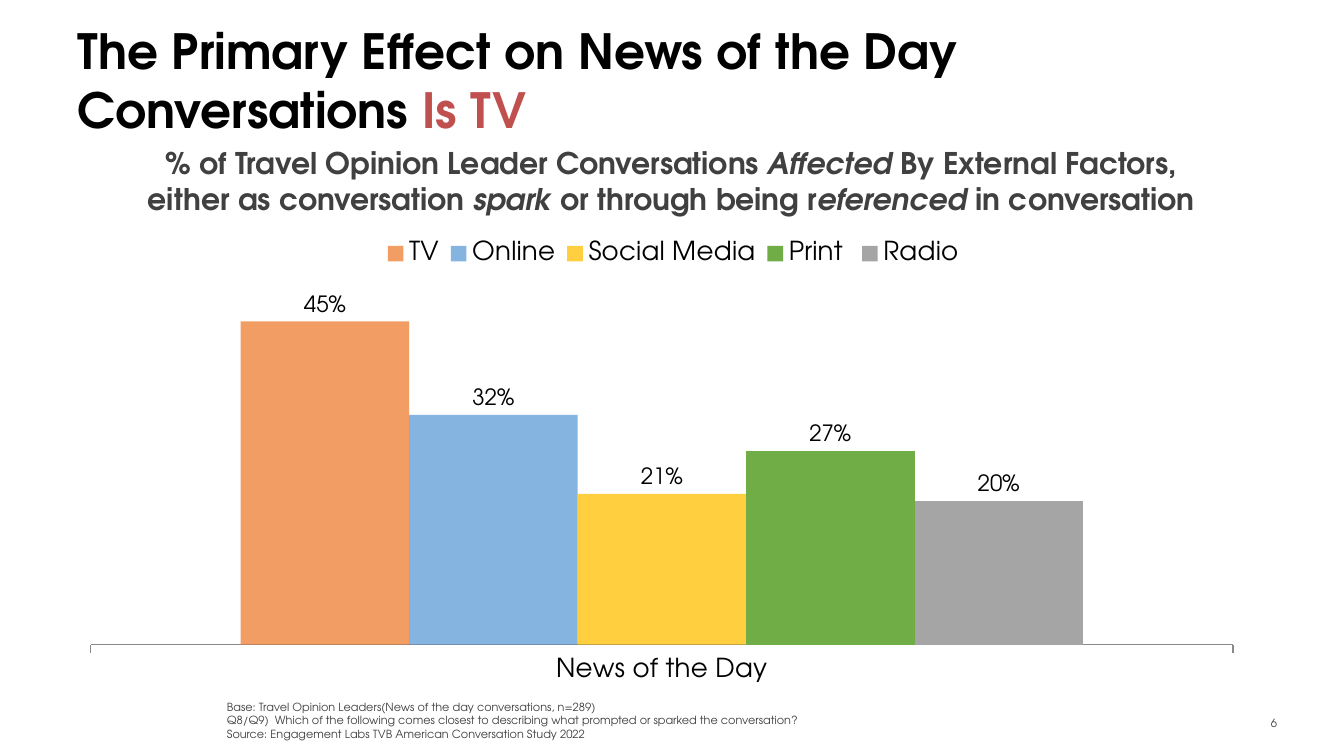
from lxml import etree
from pptx import Presentation
from pptx import util as u
from pptx.chart.data import CategoryChartData
from pptx.dml.color import RGBColor
from pptx.enum import chart as ch, text
from pptx.oxml import parse_xml
from pptx.oxml.ns import nsdecls, qn

FONT = "TeX Gyre Adventor"
W = 10
H = W * 9 / 16
C = {"ink": "000000", "accent": "C0504D", "body": "404040", "page": "3C3C3A", "axis": "898989",
     "tv": "ED7D31", "online": "5B9BD5", "social": "FFC000", "print": "70AD47", "radio": "A5A5A5"}
SERIES = [("TV", 0.45, "tv", 75), ("Online", 0.32, "online", 75),
          ("Social Media", 0.21, "social", 75), ("Print ", 0.27, "print", 100),
          ("Radio", 0.20, "radio", 100)]


def rgb(key):
    return RGBColor.from_string(C[key])


def place(box):
    return [u.Inches(round(share * side, 2)) for share, side in zip(box, (W, H, W, H))]


def apply(obj, **formats):
    for name, value in formats.items():
        setattr(obj, name, value)


def set_font(font, size, color, **formats):
    apply(font, name=FONT, size=u.Pt(size), **formats)
    font.color.rgb = rgb(color)


def add_text(s, box, paragraphs, size, color, align=text.PP_ALIGN.LEFT, bold=False, **frame):
    tf = s.shapes.add_textbox(*place(box)).text_frame
    apply(tf, **{"word_wrap": True, **frame})
    for i, runs in enumerate(paragraphs):
        p = tf.paragraphs[0] if i == 0 else tf.add_paragraph()
        p.alignment = align
        for words, formats in runs:
            if words == "\n":
                p.add_line_break()
                continue
            r = p.add_run()
            r.text = words
            style = {"size": size, "color": color, "bold": bold, **formats}
            set_font(r.font, **style)


def add_title(s, box):
    add_text(s, box, [[("The Primary Effect on News of the Day Conversations ", {}),
                       ("Is TV", {"color": "accent"})]],
             26, "ink", bold=True, margin_top=0)


def add_subtitle(s, box):
    it = {"italic": True}
    add_text(s, box, [
        [("% of Travel Opinion Leader Conversations ", {}), ("Affected", it),
         (" By External Factors,", {})],
        [("either as conversation ", {}), ("spark", it), (" or through being r", {}),
         ("eferenced", it), (" in conversation", {})]],
        16, "body", text.PP_ALIGN.CENTER, True, word_wrap=False,
        auto_size=text.MSO_AUTO_SIZE.SHAPE_TO_FIT_TEXT)


def add_footnote(s, box):
    add_text(s, box, [
        [("Base: Travel Opinion Leaders(News of the day conversations, n=289)", {}), ("\n", {}),
         ("Q8/Q9)  Which of the following comes closest to describing what prompted "
          "or sparked the conversation?", {})],
        [("Source: Engagement Labs TVB American Conversation Study 2022", {})]],
        6, "body", vertical_anchor=text.MSO_ANCHOR.BOTTOM,
        auto_size=text.MSO_AUTO_SIZE.SHAPE_TO_FIT_TEXT)


def add_page_number(s, box):
    add_text(s, box, [[("6", {}), (" ", {"size": 8})]], 6, "page", text.PP_ALIGN.RIGHT,
             vertical_anchor=text.MSO_ANCHOR.MIDDLE)


def manual_layout(x, y, w, h, inner=False):
    tags = [("layoutTarget", "inner")] if inner else []
    tags += [("xMode", "edge"), ("yMode", "edge"), ("x", x), ("y", y), ("w", w), ("h", h)]
    body = "".join(f'<c:{tag} val="{val}"/>' for tag, val in tags)
    return parse_xml(f'<c:layout {nsdecls("c")}><c:manualLayout>{body}</c:manualLayout></c:layout>')


def set_layout(parent, index, layout):
    for old in parent.findall(qn("c:layout")):
        parent.remove(old)
    parent.insert(index, layout)


def style_series(series, color, opacity):
    fill = series.format.fill
    fill.solid()
    fill.fore_color.rgb = rgb(color)
    if opacity < 100:
        clr = series._element.spPr.find(".//" + qn("a:srgbClr"))
        etree.SubElement(clr, qn("a:alpha")).set("val", str(opacity * 1000))
    labels = series.data_labels
    apply(labels, show_value=True, number_format="0%", number_format_is_linked=False,
          position=ch.XL_LABEL_POSITION.OUTSIDE_END)
    set_font(labels.font, 12, "ink")


def add_effect_chart(s, box):
    data = CategoryChartData(number_format="0%")
    data.categories = ["News of the Day"]
    for name, value, _, _ in SERIES:
        data.add_series(name, [value])
    chart = s.shapes.add_chart(ch.XL_CHART_TYPE.COLUMN_CLUSTERED, *place(box), data).chart
    apply(chart, has_title=False, has_legend=True)
    set_font(chart.font, 18, "ink")
    apply(chart.legend, position=ch.XL_LEGEND_POSITION.TOP, include_in_layout=False)
    set_font(chart.legend.font, 14, "ink")
    apply(chart.plots[0], gap_width=178, overlap=0, vary_by_categories=False)
    apply(chart.value_axis, visible=False, minimum_scale=0, maximum_scale=0.5,
          has_major_gridlines=False)
    axis = chart.category_axis
    apply(axis, major_tick_mark=ch.XL_TICK_MARK.OUTSIDE, has_major_gridlines=False)
    set_font(axis.tick_labels.font, 14, "ink")
    axis.format.line.width = u.Pt(0.75)
    axis.format.line.color.rgb = rgb("axis")
    for series, (_, _, color, opacity) in zip(chart.plots[0].series, SERIES):
        style_series(series, color, opacity)
    root = chart._chartSpace.chart
    set_layout(root.plotArea, 0, manual_layout(0, 0.137, 1, 0.755, inner=True))
    set_layout(root.find(qn("c:legend")), 1, manual_layout(0.25, 0.03, 0.52, 0.08))


def main():
    prs = Presentation()
    apply(prs, slide_width=u.Inches(W), slide_height=u.Inches(H))
    s = prs.slides.add_slide(prs.slide_layouts[6])
    add_page_number(s, (0.904, 0.928, 0.059, 0.053))
    add_effect_chart(s, (0.067, 0.292, 0.851, 0.63))
    add_title(s, (0.048, 0.028, 0.907, 0.167))
    add_subtitle(s, (0.093, 0.183, 0.813, 0.114))
    add_footnote(s, (0.159, 0.918, 0.842, 0.071))
    prs.save("out.pptx")


if __name__ == "__main__":
    main()
